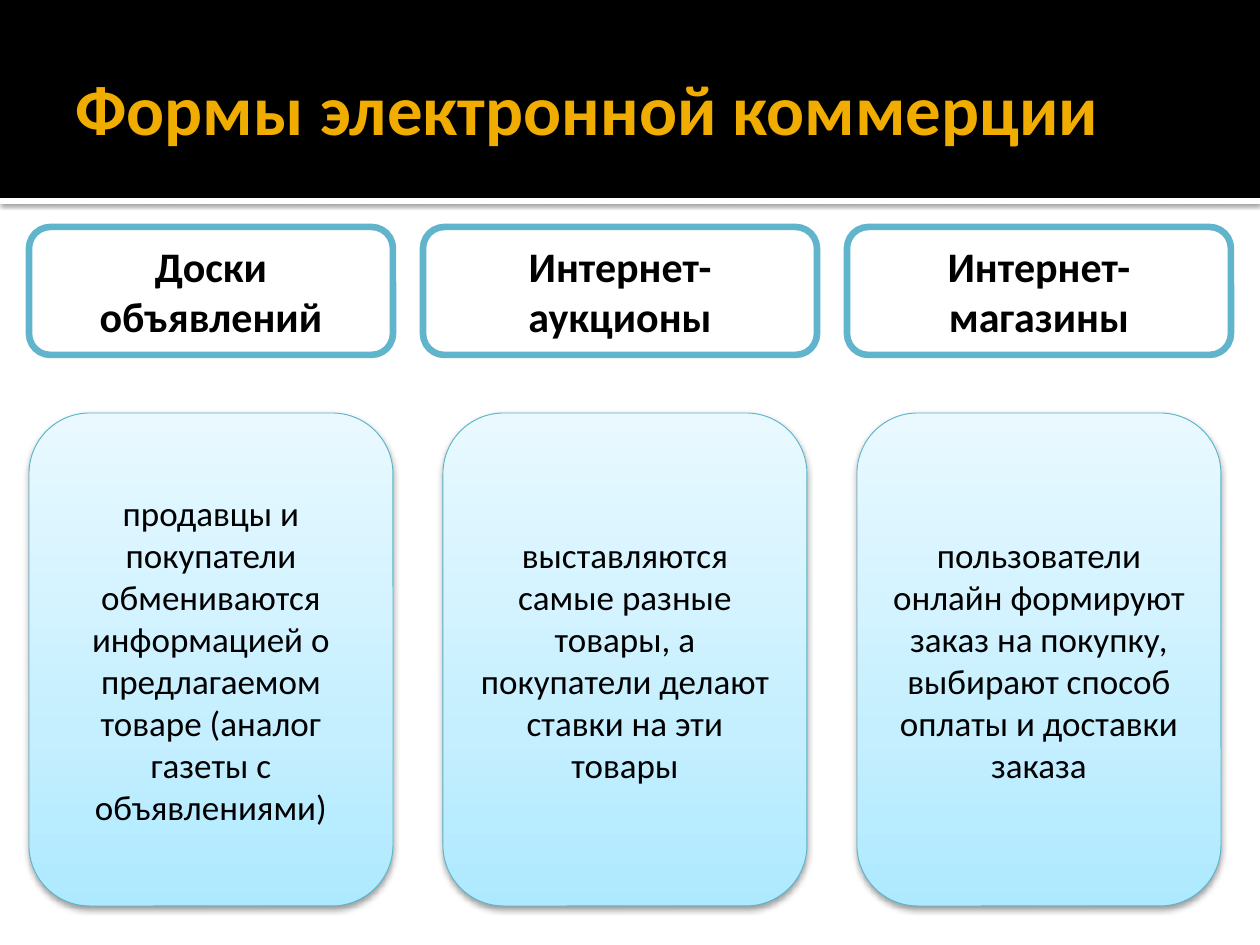
from copy import deepcopy
from pptx import Presentation
from pptx import util as u
from pptx.dml.color import RGBColor
from pptx.enum import shapes, text
from pptx.oxml import parse_xml
from pptx.oxml.ns import nsdecls

PX = u.Inches(1) / 126
TITLE = "Формы электронной коммерции"
FORMS = [
    ("Доски объявлений", 29, 364,
     "продавцы и покупатели обмениваются информацией о предлагаемом товаре "
     "(аналог газеты с объявлениями)"),
    ("Интернет-аукционы", 423, 394,
     "выставляются самые разные товары, а покупатели делают ставки на эти товары"),
    ("Интернет-магазины", 847, 384,
     "пользователи онлайн формируют заказ на покупку, выбирают способ оплаты "
     "и доставки заказа"),
]
CARD_LEFT, CARD_PITCH, CARD_WIDTH = 29, 414, 364
CARD_STOPS = [(0, "ADE9FF"), (0.35, "C5EFFF"), (1, "E9F9FF")]


def px(value):
    return round(value * PX)


def color(value):
    return RGBColor.from_string(value)


def place(shape, left, top, width, height):
    values = dict(left=left, top=top, width=width, height=height)
    for name, value in values.items():
        setattr(shape, name, px(value))


def write(shape, words, size, ink, bold, align):
    frame = shape.text_frame
    frame.word_wrap = True
    frame.vertical_anchor = text.MSO_ANCHOR.MIDDLE
    para = frame.paragraphs[0]
    para.alignment = align
    span = para.add_run()
    span.text = words
    for name, value in dict(name="Calibri", size=u.Pt(size), bold=bold).items():
        setattr(span.font, name, value)
    span.font.color.rgb = color(ink)


def add_box(page, kind, bounds, fill=None, line=None, width=0):
    box = page.shapes.add_shape(kind, *map(px, bounds))
    box.shadow.inherit = False
    if fill:
        box.fill.solid()
        box.fill.fore_color.rgb = color(fill)
    if line:
        box.line.color.rgb = color(line)
        box.line.width = u.Pt(width)
    else:
        box.line.fill.background()
    return box


def add_shadow(box, alpha, blur, distance):
    effects = box._element.spPr.find("{*}effectLst")
    effects.append(parse_xml(
        f'<a:outerShdw {nsdecls("a")} blurRad="{u.Pt(blur)}" dist="{u.Pt(distance)}" '
        f'dir="5400000" algn="ctr" rotWithShape="0"><a:srgbClr val="000000">'
        f'<a:alpha val="{alpha * 1000}"/></a:srgbClr></a:outerShdw>'))


def fill_gradient(box, stops):
    box.fill.gradient()
    box.fill.gradient_angle = 90
    stop_list = box._element.spPr.find("{*}gradFill/{*}gsLst")
    stop_list.append(deepcopy(stop_list[0]))
    for stop, (position, value) in zip(box.fill.gradient_stops, stops):
        stop.position = position
        stop.color.rgb = color(value)


def main():
    deck = Presentation()
    deck.slide_width, deck.slide_height = px(1260), px(945)
    page = deck.slides.add_slide(deck.slide_layouts[5])
    rect, rounded = shapes.MSO_SHAPE.RECTANGLE, shapes.MSO_SHAPE.ROUNDED_RECTANGLE
    center = text.PP_ALIGN.CENTER

    rule = add_box(page, rect, (0, 198, 1260, 6), "FFFFFF")
    add_shadow(rule, 60, 2.5, 0.8)
    add_box(page, rect, (0, 0, 1260, 198), "000000")

    title = page.shapes.title
    page.shapes._spTree.append(title._element)
    place(title, 63, 21, 1134, 173)
    title.text_frame.margin_right = u.Inches(0.05)
    write(title, TITLE, 40.5, "F0AD00", True, text.PP_ALIGN.LEFT)

    for index, (name, left, width, about) in enumerate(FORMS):
        header = add_box(page, rounded, (left, 227, width, 128), "FFFFFF", "60B5CC", 3.78)
        write(header, name, 24, "000000", True, center)
        card_left = CARD_LEFT + index * CARD_PITCH
        card = add_box(page, rounded, (card_left, 413, CARD_WIDTH, 493),
                       line="5BB3CA", width=0.5)
        fill_gradient(card, CARD_STOPS)
        add_shadow(card, 38, 3.5, 2)
        write(card, about, 20, "000000", False, center)

    deck.save("out.pptx")


if __name__ == "__main__":
    main()
